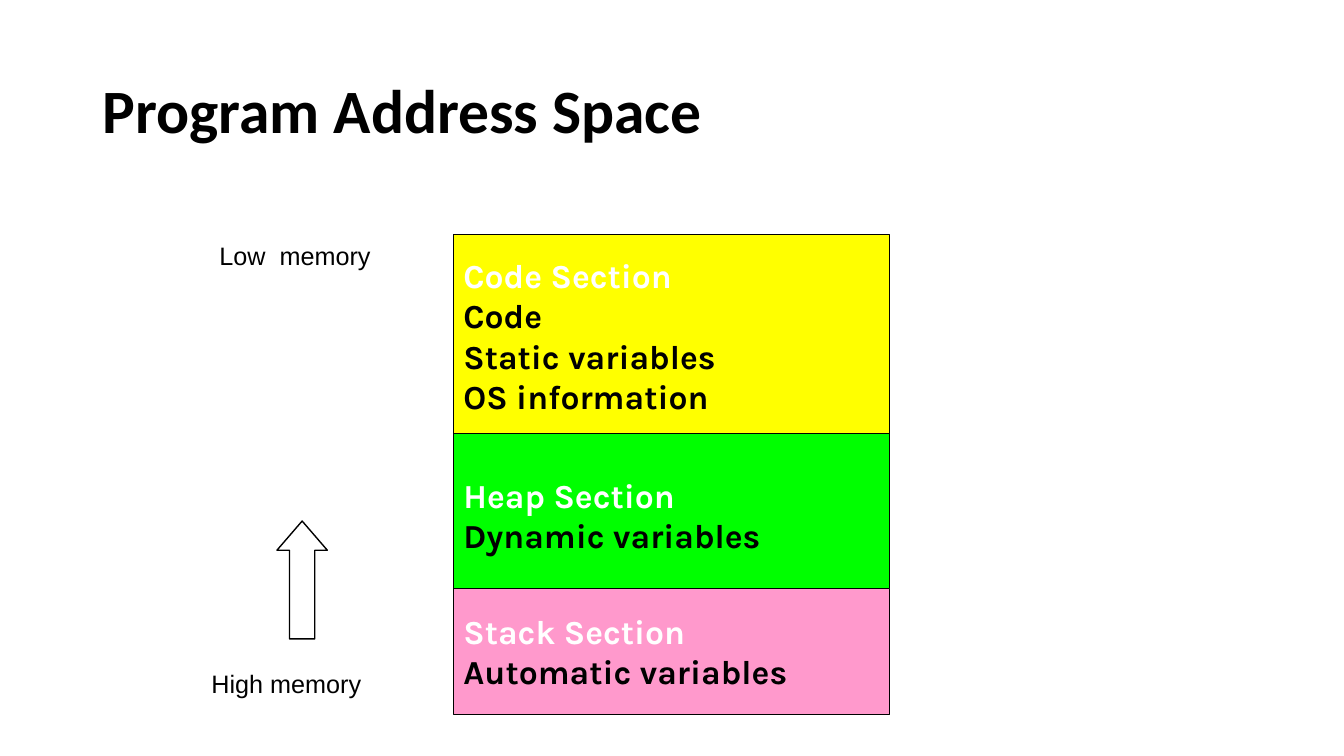
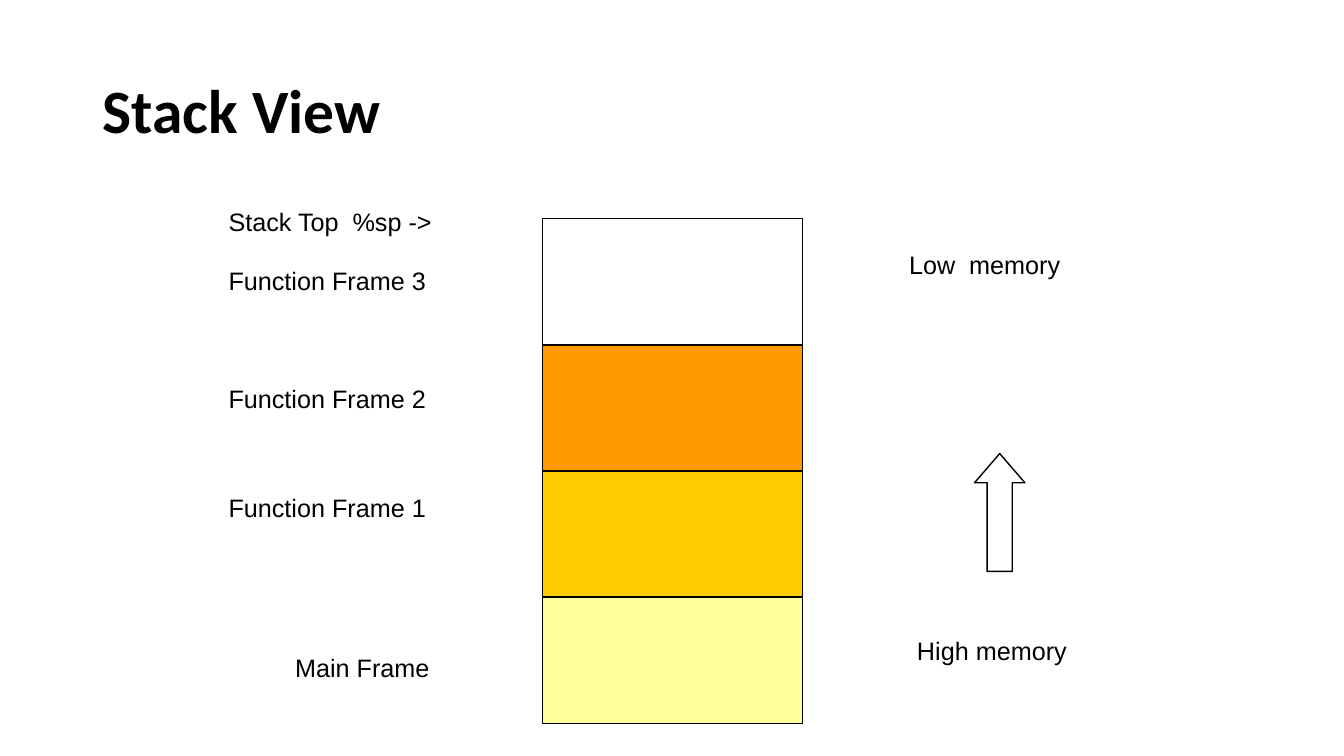
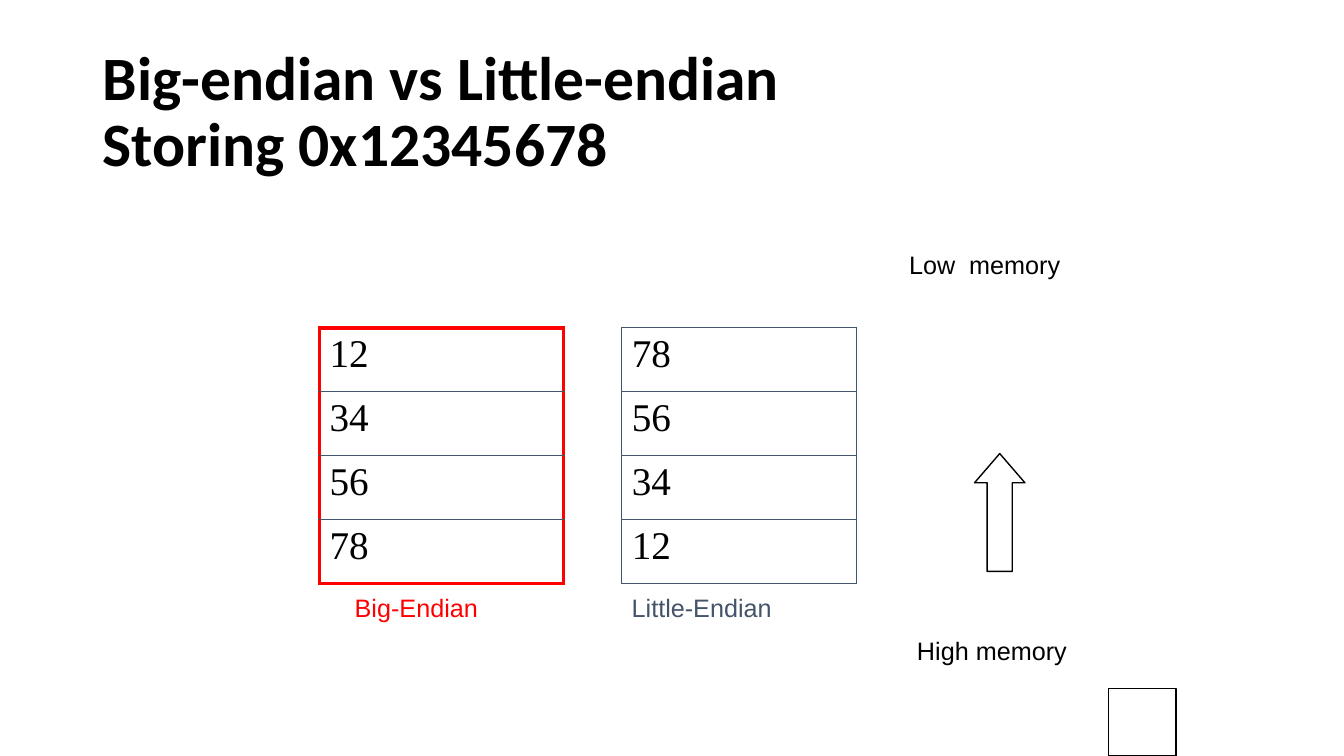
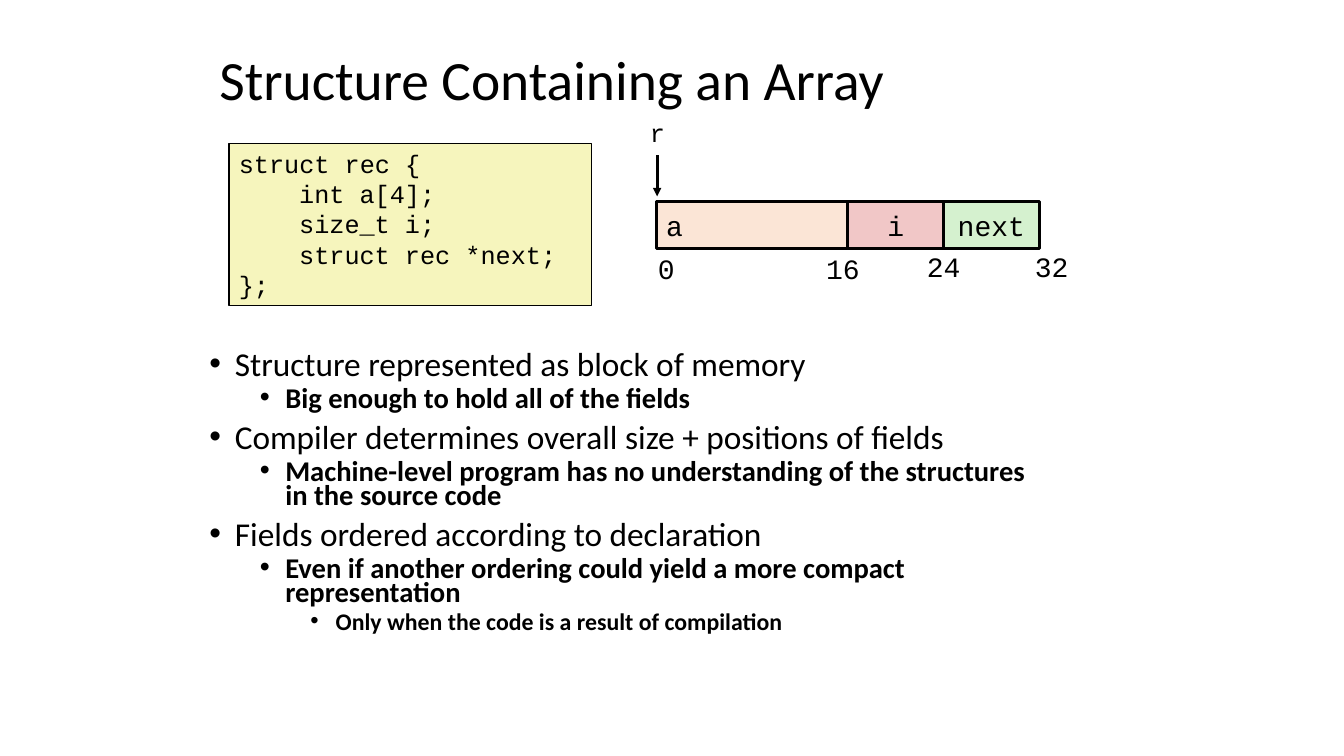
import pptx
import pptx.util
import pptx.dml.color
import pptx.enum.shapes
import pptx.enum.text
import pptx.oxml
import pptx.oxml.ns
import lxml.etree

Cm = pptx.util.Cm
Pt = pptx.util.Pt
RGBColor = pptx.dml.color.RGBColor
SHAPE = pptx.enum.shapes.MSO_SHAPE
ALIGN = pptx.enum.text.PP_ALIGN
ANCHOR = pptx.enum.text.MSO_ANCHOR
qn = pptx.oxml.ns.qn

BLACK = RGBColor(0x00, 0x00, 0x00)
WHITE = RGBColor(0xFF, 0xFF, 0xFF)
YELLOW = RGBColor(0xFF, 0xFF, 0x00)
GREEN = RGBColor(0x00, 0xFF, 0x00)
PINK = RGBColor(0xFF, 0x99, 0xCC)
ORANGE = RGBColor(0xFF, 0x99, 0x00)
GOLD = RGBColor(0xFF, 0xCC, 0x00)
LEMON = RGBColor(0xFF, 0xFF, 0x99)
RED = RGBColor(0xFF, 0x00, 0x00)
SLATE = RGBColor(0x44, 0x54, 0x6A)
PEACH = RGBColor(0xFB, 0xE5, 0xD6)
ROSE = RGBColor(0xF1, 0xC7, 0xC7)
MINT = RGBColor(0xD5, 0xF1, 0xCF)
CREAM = RGBColor(0xF6, 0xF5, 0xBD)

HEAD = "Calibri"
BODY = "Arial"
BLOCK = "Karla"
CODE = "Courier New"
SERIF = "Times New Roman"


def write(frame, text, size=18, font=BODY, color=BLACK, bold=False,
          align=ALIGN.LEFT, pitch=None, before=0, left=0, bullet=None):
    para = frame.paragraphs[0]
    if para.runs:
        para = frame.add_paragraph()
    para.text = text
    para.alignment = align
    para.space_before = Pt(before)
    if pitch:
        para.line_spacing = pitch
    for run in para.runs:
        run.font.size = Pt(size)
        run.font.name = font
        run.font.bold = bold
        run.font.color.rgb = color
    props = para._p.get_or_add_pPr()
    if left:
        props.set("marL", str(int(Cm(left))))
    if bullet:
        props.set("indent", str(int(Cm(-0.64))))
        face = lxml.etree.SubElement(props, qn("a:buFont"))
        face.set("typeface", BODY)
        lxml.etree.SubElement(props, qn("a:buChar")).set("char", bullet)


def box(slide, x, y, w, h, anchor=ANCHOR.TOP, wrap=True):
    area = slide.shapes.add_textbox(Cm(x), Cm(y), Cm(w), Cm(h))
    frame = area.text_frame
    frame.word_wrap = wrap
    frame.vertical_anchor = anchor
    return frame


def label(slide, text, x, y, w=5.72, h=1.02, wrap=True, **style):
    write(box(slide, x, y, w, h, wrap=wrap), text, **style)


def title(slide, text, x=2.34, y=1.02, w=29.21, h=3.68, size=44, bold=True):
    frame = box(slide, x, y, w, h, ANCHOR.MIDDLE)
    write(frame, text, size=size, font=HEAD, bold=bold, pitch=0.9)


def shape(slide, kind, x, y, w, h, fill, line=1):
    form = slide.shapes.add_shape(kind, Cm(x), Cm(y), Cm(w), Cm(h))
    form.shadow.inherit = False
    form.fill.solid()
    form.fill.fore_color.rgb = fill
    form.line.color.rgb = BLACK
    form.line.width = Pt(line)
    form.text_frame.word_wrap = True
    form.text_frame.vertical_anchor = ANCHOR.MIDDLE
    return form


def memory(slide, low, arrow, high):
    form = shape(slide, SHAPE.UP_ARROW, *arrow, 1.27, 2.97, WHITE)
    form.adjustments[0] = 0.5
    form.adjustments[1] = 0.58
    label(slide, "Low  memory", *low)
    label(slide, "High memory", *high)


def side_memory(slide):
    memory(slide, (22.66, 6.15), (24.56, 11.43), (22.86, 15.88))


def border(cell, side, color, width):
    props = cell._tc.get_or_add_tcPr()
    edge = lxml.etree.SubElement(props, qn("a:" + side))
    edge.set("w", str(int(Pt(width))))
    fill = lxml.etree.SubElement(edge, qn("a:solidFill"))
    lxml.etree.SubElement(fill, qn("a:srgbClr")).set("val", str(color))


def column(slide, values, x, y, w, color, width):
    count = len(values)
    row = 1.61
    table = slide.shapes.add_table(
        count, 1, Cm(x), Cm(y), Cm(w), Cm(row * count)).table
    table.first_row = False
    table.horz_banding = False
    for i, value in enumerate(values):
        table.rows[i].height = Cm(row)
        cell = table.cell(i, 0)
        write(cell.text_frame, value, size=28, font=SERIF)
        outer, inner = (color, width), (SLATE, 1)
        border(cell, "lnL", *outer)
        border(cell, "lnR", *outer)
        border(cell, "lnT", *(outer if i == 0 else inner))
        border(cell, "lnB", *(outer if i == count - 1 else inner))
        cell.fill.background()


def arrow(slide, x, top, end):
    line = slide.shapes.add_connector(
        pptx.enum.shapes.MSO_CONNECTOR.STRAIGHT,
        Cm(x), Cm(top), Cm(x), Cm(end))
    line.line.color.rgb = BLACK
    line.line.width = Pt(2)
    stroke = line.line._get_or_add_ln()
    lxml.etree.SubElement(stroke, qn("a:tailEnd")).set("type", "triangle")
    lxml.etree.SubElement(line._element.spPr, qn("a:effectLst"))


def space_slide(slide):
    title(slide, "Program Address Space")
    parts = [
        (5.92, 5.08, YELLOW, "Code Section",
         ["Code", "Static variables", "OS information"]),
        (10.92, 4.11, GREEN, "Heap Section", ["Dynamic variables"]),
        (14.82, 3.18, PINK, "Stack Section", ["Automatic variables"]),
    ]
    for y, h, fill, name, items in parts:
        form = shape(slide, SHAPE.RECTANGLE, 11.43, y, 11, h, fill, 0.75)
        frame = form.text_frame
        write(frame, name, size=24, font=BLOCK, color=WHITE, bold=True)
        for item in items:
            write(frame, item, size=24, font=BLOCK, bold=True)
    memory(slide, (5.28, 5.92), (6.98, 13.13), (5.08, 16.71))


def stack_slide(slide):
    title(slide, "Stack View")
    label(slide, "Stack Top  %sp ->", 5.51, 5.08, 8.46)
    side_memory(slide)
    for i, fill in enumerate([WHITE, ORANGE, GOLD, LEMON]):
        shape(slide, SHAPE.RECTANGLE, 13.67, 5.51 + 3.18 * i, 6.55, 3.18, fill)
    label(slide, "Main Frame", 7.19, 16.31, 3.94, wrap=False)
    for num, y in [(1, 12.27), (2, 9.53), (3, 6.55)]:
        label(slide, f"Function Frame {num}", 5.51, y, 5.54, wrap=False)


def endian_slide(slide):
    title(slide, "Big-endian vs Little-endian\nStoring 0x12345678")
    data = ["12", "34", "56", "78"]
    column(slide, data, 8.05, 8.26, 6.15, RED, 3)
    column(slide, data[::-1], 15.67, 8.26, 5.92, SLATE, 1)
    side_memory(slide)
    label(slide, "Big-Endian", 8.69, 14.81, 3.66, wrap=False, color=RED)
    label(slide, "Little-Endian", 15.67, 14.81, 4.06, wrap=False, color=SLATE)
    shape(slide, SHAPE.ACTION_BUTTON_CUSTOM, 27.94, 17.35, 1.7, 1.7, WHITE)


def struct_slide(slide):
    title(slide, "Structure Containing an Array", 5.28, 1.27, 23.06, 1.6,
          size=39.6, bold=False)
    points = [
        (0, "Structure represented as block of memory"),
        (1, "Big enough to hold all of the fields"),
        (0, "Compiler determines overall size + positions of fields"),
        (1, "Machine-level program has no understanding of the structures "
            "in the source code"),
        (0, "Fields ordered according to declaration"),
        (1, "Even if another ordering could yield a more compact "
            "representation"),
        (2, "Only when the code is a result of compilation"),
    ]
    frame = box(slide, 5.03, 8.81, 21.49, 7.95)
    for level, text in points:
        write(frame, text, size=(23.8, 20.4, 17)[level], font=HEAD,
              bold=level > 0, pitch=0.7, before=5 if level else 10,
              left=0.64 + 1.27 * level, bullet="•")

    unit = 9.65 / 32
    fields = [("a", 0, 16, PEACH, ALIGN.LEFT),
              ("i", 16, 8, ROSE, ALIGN.CENTER),
              ("next", 24, 8, MINT, ALIGN.CENTER)]
    for name, start, size, fill, align in fields:
        form = shape(slide, SHAPE.RECTANGLE, 16.54 + start * unit, 5.08,
                     size * unit, 1.19, fill, 2)
        write(form.text_frame, name, size=20, font=CODE, align=align)
    arrow(slide, 16.56, 3.91, 4.95)
    label(slide, "r", 16.13, 2.84, 0.89, wrap=False, font=CODE)
    marks = [("0", 16.33, 6.22, 0.91), ("16", 20.57, 6.22, 1.37),
             ("24", 23.11, 6.17, 1.37), ("32", 25.83, 6.17, 1.37)]
    for text, x, y, w in marks:
        label(slide, text, x, y, w, 1.09, wrap=False, size=20, font=CODE)

    form = shape(slide, SHAPE.RECTANGLE, 5.77, 3.61, 9.14, 4.09, CREAM)
    form.text_frame.vertical_anchor = ANCHOR.TOP
    lines = [(0, "struct rec {"), (1, "int a[4];"), (1, "size_t i;"),
             (1, "struct rec *next;"), (0, "};")]
    for depth, text in lines:
        write(form.text_frame, text, font=CODE, left=1.52 * depth)


def main():
    deck = pptx.Presentation()
    deck.slide_width = Cm(33.87)
    deck.slide_height = Cm(19.05)
    for build in (space_slide, stack_slide, endian_slide, struct_slide):
        build(deck.slides.add_slide(deck.slide_layouts[6]))
    deck.save("out.pptx")


if __name__ == "__main__":
    main()
